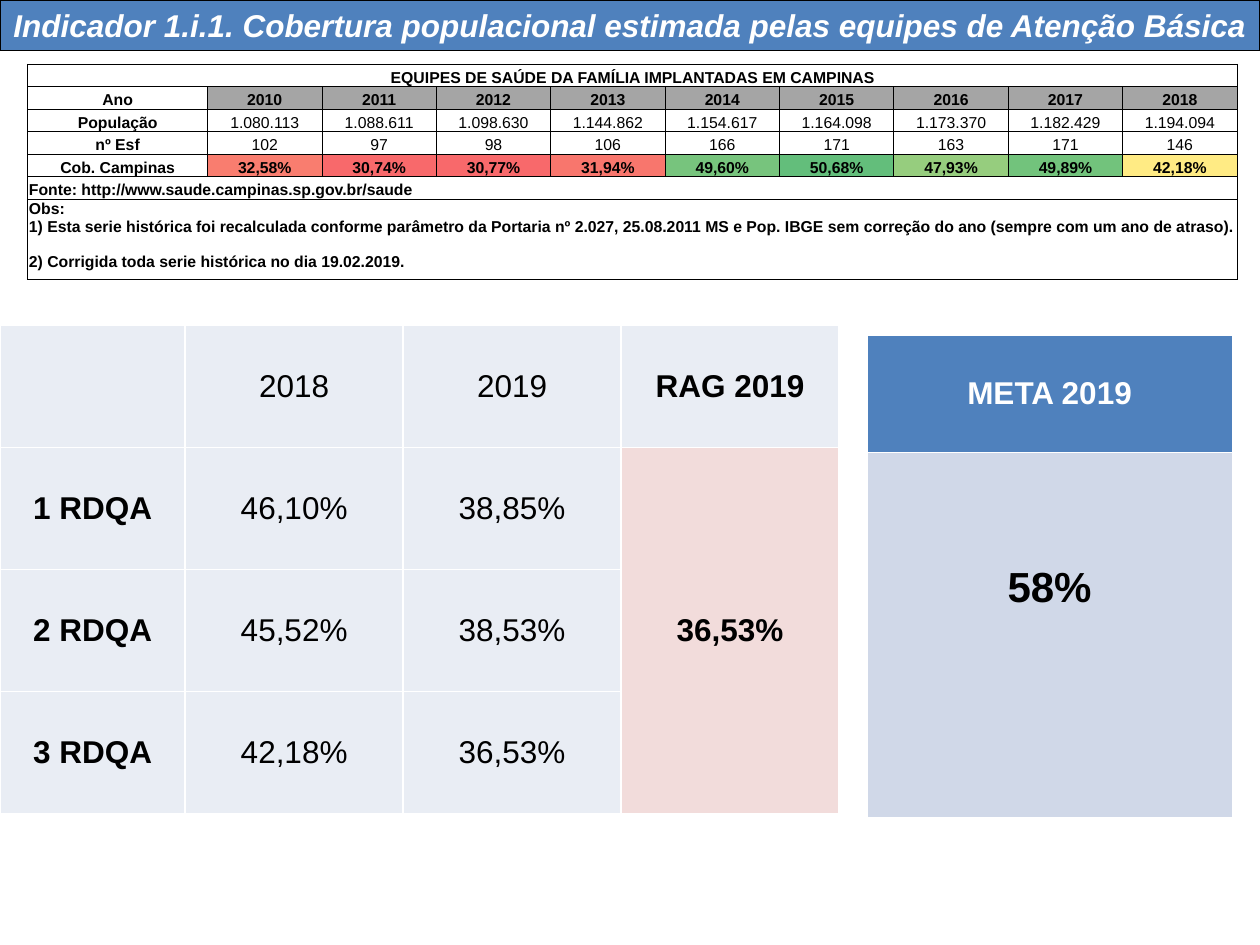
from lxml import etree
from pptx import Presentation
from pptx.dml.color import RGBColor
from pptx.enum.text import MSO_ANCHOR, MSO_AUTO_SIZE, PP_ALIGN
from pptx.oxml.ns import qn
from pptx.util import Inches, Pt

LEFT, CENTER = PP_ALIGN.LEFT, PP_ALIGN.CENTER
TOP, MIDDLE, BOTTOM = MSO_ANCHOR.TOP, MSO_ANCHOR.MIDDLE, MSO_ANCHOR.BOTTOM
TITLE_ONLY = 5
FONT = "Arial"
COLORS = {
    "blue": "4F81BD", "black": "000000", "white": "FFFFFF", "gray": "A5A5A5",
    "pale": "E9EDF4", "pink": "F2DCDB", "lavender": "D0D8E8",
}

YEARS = range(2010, 2019)
POPULATION = ["1.080.113", "1.088.611", "1.098.630", "1.144.862", "1.154.617",
              "1.164.098", "1.173.370", "1.182.429", "1.194.094"]
TEAMS = [102, 97, 98, 106, 166, 171, 163, 171, 146]
COVERAGE = [("32,58%", "F97D6F"), ("30,74%", "F8696B"), ("30,77%", "F8696B"),
            ("31,94%", "F8766D"), ("49,60%", "77C47D"), ("50,68%", "63BE7B"),
            ("47,93%", "96CD7E"), ("49,89%", "72C37C"), ("42,18%", "FFEB84")]
NOTES = [
    "Obs:",
    "1) Esta serie histórica foi recalculada conforme parâmetro da Portaria nº 2.027, "
    "25.08.2011 MS e Pop. IBGE sem correção do ano (sempre com um ano de atraso).",
    "2) Corrigida toda serie histórica no dia 19.02.2019.",
]
RESULTS = [("1 RDQA", "46,10%", "38,85%"),
           ("2 RDQA", "45,52%", "38,53%"),
           ("3 RDQA", "42,18%", "36,53%")]


def rgb(color):
    return RGBColor.from_string(COLORS.get(color, color))


def write(tf, lines, align=CENTER, color="black", **font):
    """Fill a text frame with one paragraph per line."""
    for i, line in enumerate(lines):
        p = tf.paragraphs[0] if i == 0 else tf.add_paragraph()
        p.alignment = align
        r = p.add_run()
        r.text = line
        for name, value in {"name": FONT, **font}.items():
            setattr(r.font, name, value)
        r.font.color.rgb = rgb(color)


def set_borders(cell, color, width):
    tcPr = cell._tc.get_or_add_tcPr()
    for i, side in enumerate(("lnL", "lnR", "lnT", "lnB")):
        ln = etree.Element(qn(f"a:{side}"), w=str(Pt(width)))
        fill = etree.SubElement(ln, qn("a:solidFill"))
        etree.SubElement(fill, qn("a:srgbClr"), val=COLORS[color])
        tcPr.insert(i, ln)


def add_grid(s, box, cols, rows, border, width, margins=(0, 0, 0, 0)):
    """Add an unfilled table; cols and rows are relative sizes within the box."""
    table = s.shapes.add_table(len(rows), len(cols), *map(Inches, box)).table
    table.first_row = table.horz_banding = False
    for col, share in zip(table.columns, cols):
        col.width = Inches(box[2] * share / sum(cols))
    for row, share in zip(table.rows, rows):
        row.height = Inches(box[3] * share / sum(rows))
    sides = ("margin_left", "margin_top", "margin_right", "margin_bottom")
    for cell in table.iter_cells():
        set_borders(cell, border, width)
        cell.fill.background()
        for side, margin in zip(sides, margins):
            setattr(cell, side, Inches(margin))
    return table


def fill_cell(cell, lines, fill=None, anchor=MIDDLE, **text):
    cell.vertical_anchor = anchor
    if fill:
        cell.fill.solid()
        cell.fill.fore_color.rgb = rgb(fill)
    write(cell.text_frame, lines, **text)


def add_title(s, box):
    title = s.shapes.title
    title.left, title.top, title.width, title.height = map(Inches, box)
    title.fill.solid()
    title.fill.fore_color.rgb = rgb("blue")
    title.line.color.rgb = rgb("black")
    title.line.width = Pt(0.75)
    tf = title.text_frame
    layout = {"auto_size": MSO_AUTO_SIZE.NONE, "word_wrap": True,
              "vertical_anchor": MIDDLE, "margin_left": 0, "margin_right": 0}
    for name, value in layout.items():
        setattr(tf, name, value)
    write(tf, ["Indicador 1.i.1. Cobertura populacional estimada pelas equipes "
               "de Atenção Básica"],
          color="white", size=Pt(18), bold=True, italic=True)


def add_history(s, box):
    table = add_grid(s, box, [1.43] + [0.91] * 9, [0.18] * 6 + [0.64],
                     "black", 0.5, (0.01, 0.01, 0.01, 0))
    small = {"size": Pt(9), "anchor": BOTTOM}
    full_rows = {
        0: (["EQUIPES DE SAÚDE DA FAMÍLIA IMPLANTADAS EM CAMPINAS"], {}),
        5: (["Fonte: http://www.saude.campinas.sp.gov.br/saude"], {"align": LEFT}),
        6: (NOTES, {"align": LEFT, "anchor": TOP}),
    }
    for row, (lines, look) in full_rows.items():
        table.cell(row, 0).merge(table.cell(row, 9))
        fill_cell(table.cell(row, 0), lines, bold=True, **{**small, **look})
    table.cell(6, 0).text_frame.paragraphs[-1].space_before = Pt(10)

    series = [
        ("Ano", [(year, "gray") for year in YEARS], True),
        ("População", [(value, None) for value in POPULATION], False),
        ("nº Esf", [(value, None) for value in TEAMS], False),
        ("Cob. Campinas", COVERAGE, True),
    ]
    for row, (label, values, bold) in enumerate(series, 1):
        fill_cell(table.cell(row, 0), [label], bold=True, **small)
        for col, (value, fill) in enumerate(values, 1):
            fill_cell(table.cell(row, col), [str(value)], fill, bold=bold, **small)


def add_results(s, box):
    table = add_grid(s, box, [1.47] + [1.73] * 3, [1] * 4, "white", 1)
    for row, values in enumerate([("", "2018", "2019"), *RESULTS]):
        for col, value in enumerate(values):
            fill_cell(table.cell(row, col), [value], "pale",
                      size=Pt(18), bold=col == 0)
    fill_cell(table.cell(0, 3), ["RAG 2019"], "pale", size=Pt(18), bold=True)
    table.cell(1, 3).merge(table.cell(3, 3))
    fill_cell(table.cell(1, 3), ["36,53%"], "pink", size=Pt(18), bold=True)


def add_goal(s, box):
    table = add_grid(s, box, [1], [0.93, 2.89], "white", 1, (0.1, 0.05, 0.1, 0.05))
    header, goal = table.cell(0, 0), table.cell(1, 0)
    fill_cell(header, ["META 2019"], "blue", color="white", size=Pt(18), bold=True)
    fill_cell(goal, ["58%"], "lavender", TOP, size=Pt(24), bold=True)
    goal.margin_top = Inches(0.89)


def main():
    prs = Presentation()
    prs.slide_width, prs.slide_height = Inches(10), Inches(7.5)
    s = prs.slides.add_slide(prs.slide_layouts[TITLE_ONLY])
    add_title(s, (0, 0, 10, 0.4))
    add_results(s, (0, 2.58, 6.66, 3.88))
    add_goal(s, (6.88, 2.66, 2.9, 3.83))
    add_history(s, (0.22, 0.51, 9.6, 1.71))
    prs.save("out.pptx")


if __name__ == "__main__":
    main()
